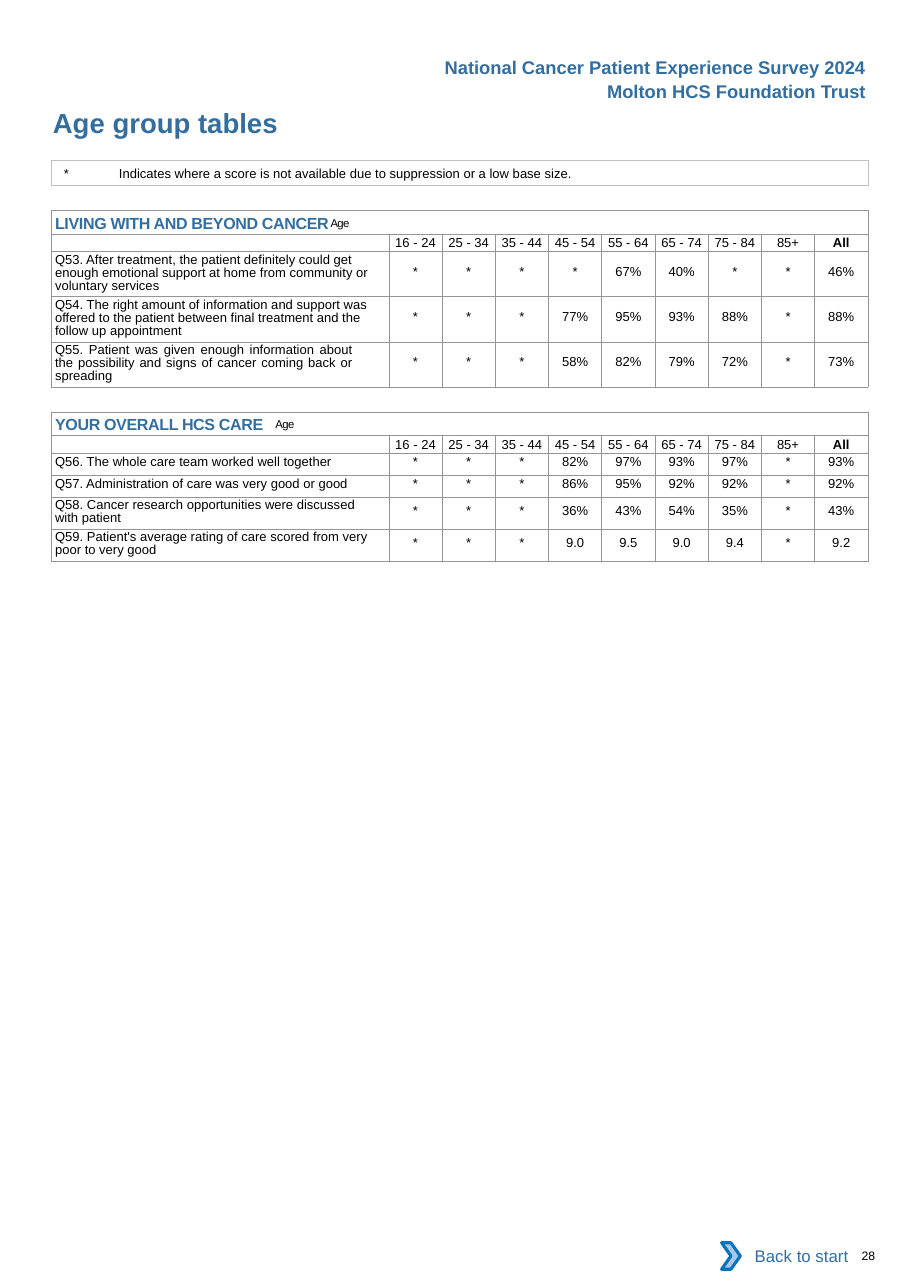
"""Build the age group tables page of a patient experience survey report."""
import pptx
import pptx.dml.color
import pptx.enum.shapes
import pptx.enum.text
import pptx.oxml
import pptx.oxml.ns
import pptx.util
from pptx.util import Inches

COLORS = {"blue": "336E9F", "black": "000000", "grid": "939598", "note": "BFBFBF",
          "white": "FFFFFF", "arrow": "A8C7E9", "arrow_edge": "0A74BB"}
FONT = "Arial"
TITLE = "Age group tables"
HEADINGS = [("National Cancer Patient Experience Survey 2024", 3.92, 0.46, 4.04),
            ("Molton HCS Foundation Trust", 5.39, 0.68, 2.57)]
NOTE = "*\tIndicates where a score is not available due to suppression or a low base size."
AGE_GROUPS = ["16 - 24", "25 - 34", "35 - 44", "45 - 54", "55 - 64", "65 - 74",
              "75 - 84", "85+", "All"]
SECTIONS = [
    ("LIVING WITH AND BEYOND CANCER", 1.91, [
        ("Q53. After treatment, the patient definitely could get enough emotional support "
         "at home from community or voluntary services", 0.41, "* * * * 67% 40% * * 46%"),
        ("Q54. The right amount of information and support was offered to the patient "
         "between final treatment and the follow up appointment", 0.41,
         "* * * 77% 95% 93% 88% * 88%"),
        ("Q55. Patient was given enough information about the possibility and signs of "
         "cancer coming back or spreading", 0.41, "* * * 58% 82% 79% 72% * 73%"),
    ]),
    ("YOUR OVERALL HCS CARE", 3.74, [
        ("Q56. The whole care team worked well together", 0.2,
         "* * * 82% 97% 93% 97% * 93%"),
        ("Q57. Administration of care was very good or good", 0.2,
         "* * * 86% 95% 92% 92% * 92%"),
        ("Q58. Cancer research opportunities were discussed with patient", 0.29,
         "* * * 36% 43% 54% 35% * 43%"),
        ("Q59. Patient's average rating of care scored from very poor to very good", 0.29,
         "* * * 9.0 9.5 9.0 9.4 * 9.2"),
    ]),
]
JUSTIFIED = "Q55."
LEFT, WIDTH, QUESTION_WIDTH = 0.47, 7.41, 3.06
HEADER_HEIGHTS = [0.21, 0.16]
VALUE_TEXT_HEIGHT = 0.17
ALIGN = pptx.enum.text.PP_ALIGN
ANCHOR = pptx.enum.text.MSO_ANCHOR


def rgb(name):
    return pptx.dml.color.RGBColor.from_string(COLORS[name])


def add_run(paragraph, text, size, color="black", bold=False, **attributes):
    run = paragraph.add_run()
    run.text = text
    run.font.name, run.font.size, run.font.bold = FONT, pptx.util.Pt(size), bold
    run.font.color.rgb = rgb(color)
    for name, value in attributes.items():
        run.font._element.set(name, str(value))


def format_paragraph(paragraph, align=ALIGN.LEFT, indent=0, tab=None):
    paragraph.alignment = align
    properties = paragraph._p.get_or_add_pPr()
    properties.set("marL", str(Inches(indent)))
    properties.set("indent", "0")
    if tab:
        properties.append(pptx.oxml.parse_xml(
            f'<a:tabLst {pptx.oxml.ns.nsdecls("a")}>'
            f'<a:tab pos="{Inches(tab)}" algn="l"/></a:tabLst>'))


def set_margins(target, top=0, right=0, bottom=0):
    target.margin_left, target.margin_top = 0, Inches(top)
    target.margin_right, target.margin_bottom = Inches(right), Inches(bottom)


def format_cell(cell):
    set_margins(cell)
    properties = cell._tc.get_or_add_tcPr()
    for side in ("lnL", "lnR", "lnT", "lnB"):
        properties.append(pptx.oxml.parse_xml(
            f'<a:{side} {pptx.oxml.ns.nsdecls("a")} w="{pptx.util.Pt(0.5)}"><a:solidFill>'
            f'<a:srgbClr val="{COLORS["grid"]}"/></a:solidFill></a:{side}>'))
    cell.fill.background()


def fill_headers(table, name):
    section = table.cell(0, 0)
    section.merge(table.cell(0, len(AGE_GROUPS)))
    section.vertical_anchor = ANCHOR.MIDDLE
    paragraph = section.text_frame.paragraphs[0]
    format_paragraph(paragraph, indent=0.03, tab=5.04)
    add_run(paragraph, name + "\t", 10.5, "blue", True, spc=-20)
    add_run(paragraph, "Age", 12.8, spc=-40, baseline=10000)
    blank = table.cell(1, 0).text_frame.paragraphs[0]
    blank._p.get_or_add_endParaRPr().set("sz", "850")
    for column, group in enumerate(AGE_GROUPS, 1):
        cell = table.cell(1, column)
        cell.vertical_anchor = ANCHOR.MIDDLE
        paragraph = cell.text_frame.paragraphs[0]
        format_paragraph(paragraph, ALIGN.CENTER)
        paragraph.line_spacing = pptx.util.Pt(9.9)
        add_run(paragraph, group, 8.5, bold=group == "All")


def fill_question(table, row, question, height, scores):
    justified = question.startswith(JUSTIFIED)
    several_lines = height > 0.2
    cell = table.cell(row, 0)
    set_margins(cell, 0.02 if several_lines else 0.01, 0.33 if justified else 0.15)
    paragraph = cell.text_frame.paragraphs[0]
    format_paragraph(paragraph, ALIGN.JUSTIFY if justified else ALIGN.LEFT, 0.03)
    if several_lines:
        paragraph.line_spacing = pptx.util.Pt(8.6)
    add_run(paragraph, question, 8.5)
    for column, score in enumerate(scores.split(), 1):
        cell = table.cell(row, column)
        set_margins(cell, (height - VALUE_TEXT_HEIGHT) / 2)
        paragraph = cell.text_frame.paragraphs[0]
        format_paragraph(paragraph, ALIGN.CENTER)
        add_run(paragraph, score, 8.5)


def add_section(slide, name, top, questions):
    heights = HEADER_HEIGHTS + [height for _, height, _ in questions]
    table = slide.shapes.add_table(
        len(heights), len(AGE_GROUPS) + 1, Inches(LEFT), Inches(top),
        Inches(WIDTH), Inches(sum(heights))).table
    table.first_row = table.horz_banding = False
    score_width = (WIDTH - QUESTION_WIDTH) / len(AGE_GROUPS)
    for index, column in enumerate(table.columns):
        column.width = Inches(score_width if index else QUESTION_WIDTH)
    for row, height in zip(table.rows, heights):
        row.height = Inches(height)
    for cell in table.iter_cells():
        format_cell(cell)
    fill_headers(table, name)
    for row, question in enumerate(questions, len(HEADER_HEIGHTS)):
        fill_question(table, row, *question)


def add_box(shapes, kind, position, fill=None, line=None, line_width=0.5):
    shape = shapes.add_shape(kind, *map(Inches, position))
    shape.shadow.inherit = False
    if fill:
        shape.fill.solid()
        shape.fill.fore_color.rgb = rgb(fill)
    else:
        shape.fill.background()
    if line:
        shape.line.color.rgb = rgb(line)
        shape.line.width = pptx.util.Pt(line_width)
    else:
        shape.line.fill.background()
    return shape


def main():
    presentation = pptx.Presentation()
    presentation.slide_width, presentation.slide_height = Inches(8.26), Inches(11.69)
    slide = presentation.slides.add_slide(presentation.slide_layouts[5])
    shapes = slide.shapes
    kinds = pptx.enum.shapes.MSO_SHAPE

    title = shapes.title
    title.left, title.top, title.width, title.height = map(Inches, (LEFT, 0.96, 4.13, 0.3))
    set_margins(title.text_frame)
    title.text_frame.vertical_anchor = ANCHOR.TOP
    format_paragraph(title.text_frame.paragraphs[0], indent=0.01)
    add_run(title.text_frame.paragraphs[0], TITLE, 18, "blue", True)

    for text, left, top, width in HEADINGS:
        frame = shapes.add_textbox(*map(Inches, (left, top, width, 0.3))).text_frame
        frame.word_wrap = False
        format_paragraph(frame.paragraphs[0], ALIGN.RIGHT)
        add_run(frame.paragraphs[0], text, 12, "blue", True)

    note = add_box(shapes, kinds.RECTANGLE, (LEFT, 1.46, WIDTH, 0.22), line="note")
    set_margins(note.text_frame, 0.04, bottom=0.04)
    note.text_frame.vertical_anchor = ANCHOR.TOP
    format_paragraph(note.text_frame.paragraphs[0], indent=0.11, tab=0.34)
    add_run(note.text_frame.paragraphs[0], NOTE, 8.5)

    for section in SECTIONS:
        add_section(slide, *section)

    back = shapes.add_group_shape().shapes
    label = add_box(back, kinds.RECTANGLE, (6.62, 11.19, 1.18, 0.42), "white")
    label.text_frame.vertical_anchor = ANCHOR.MIDDLE
    format_paragraph(label.text_frame.paragraphs[0], ALIGN.RIGHT)
    add_run(label.text_frame.paragraphs[0], "Back to start", 11, "blue")
    add_box(back, kinds.CHEVRON, (6.55, 11.28, 0.17, 0.24), "arrow", "arrow_edge", 2)

    number = shapes.add_textbox(*map(Inches, (7.72, 11.33, 0.51, 0.13))).text_frame
    number.word_wrap = True
    set_margins(number)
    format_paragraph(number.paragraphs[0], indent=0.1)
    add_run(number.paragraphs[0], "28", 8)
    presentation.save("out.pptx")


if __name__ == "__main__":
    main()
